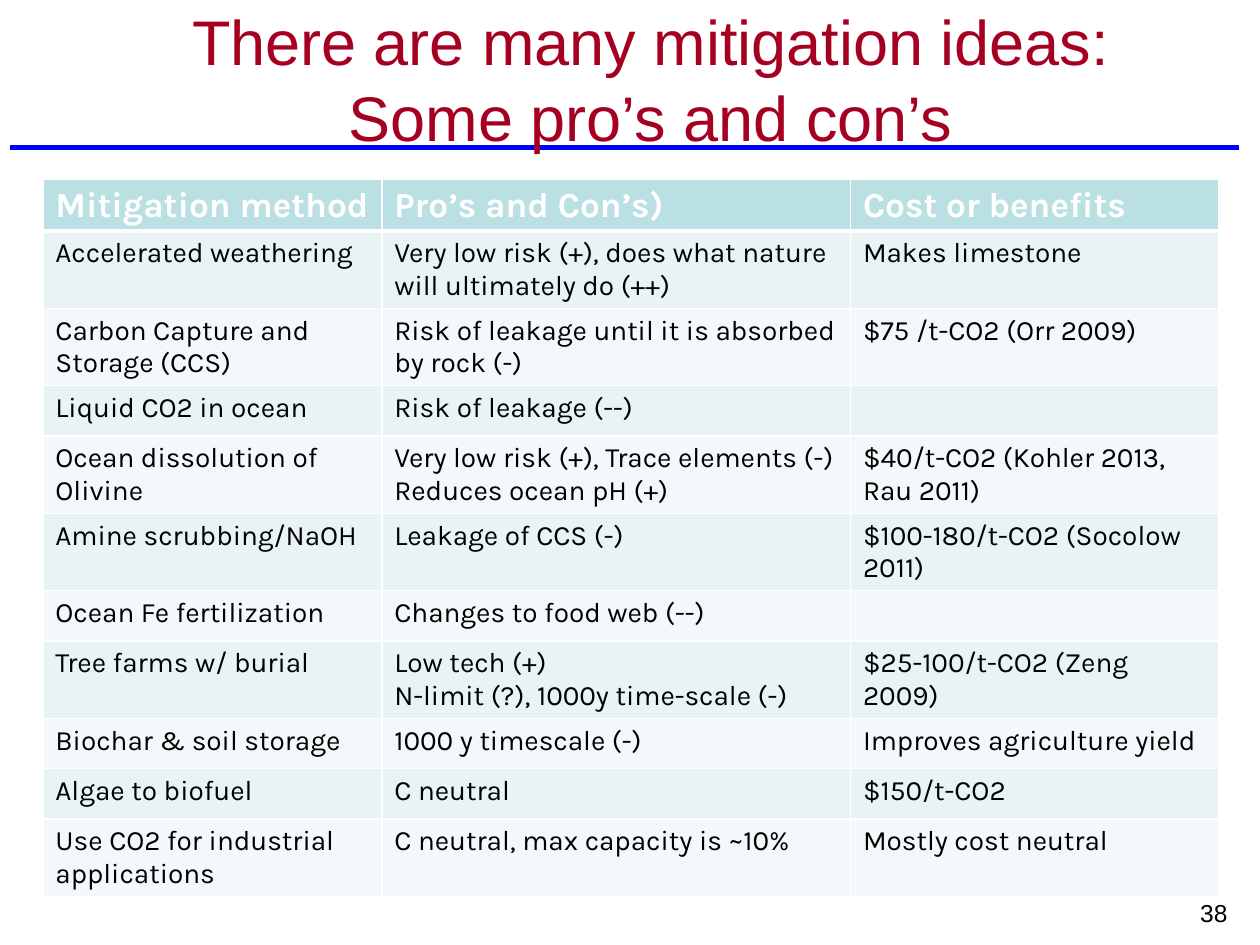
import pptx
import pptx.util
import pptx.dml.color
import pptx.enum.shapes
import pptx.enum.text
import pptx.oxml.ns
from lxml import etree

Inches = pptx.util.Inches
ALIGN = pptx.enum.text.PP_ALIGN
COLORS = {
    "title": "A50021",
    "rule": "0000FF",
    "header": "BBE0E3",
    "odd": "E7F3F4",
    "even": "F3F9FA",
    "white": "FFFFFF",
    "black": "000000",
}


def add_run(paragraph, text, size, font, color, bold=False):
    run = paragraph.add_run()
    run.text = text
    run.font.size = pptx.util.Pt(size)
    run.font.name = font
    run.font.bold = bold
    run.font.color.rgb = pptx.dml.color.RGBColor.from_string(COLORS[color])


def add_border(cell, side, points):
    qn = pptx.oxml.ns.qn
    properties = cell._tc.get_or_add_tcPr()
    line = etree.SubElement(properties, qn(f"a:ln{side}"), w=str(pptx.util.Pt(points)))
    fill = etree.SubElement(line, qn("a:solidFill"))
    etree.SubElement(fill, qn("a:srgbClr"), val=COLORS["white"])


presentation = pptx.Presentation()
presentation.slide_width = Inches(10)
presentation.slide_height = Inches(7.5)
slide = presentation.slides.add_slide(presentation.slide_layouts[6])

title_rule = slide.shapes.add_connector(
    pptx.enum.shapes.MSO_CONNECTOR.STRAIGHT,
    Inches(0.08), Inches(1.17), Inches(9.83), Inches(1.17))
title_rule.line.color.rgb = pptx.dml.color.RGBColor.from_string(COLORS["rule"])
title_rule.line.width = pptx.util.Pt(3)
etree.SubElement(title_rule._element.spPr, pptx.oxml.ns.qn("a:effectLst"))

title = slide.shapes.add_textbox(Inches(0.58), Inches(0.08), Inches(9.17), Inches(1.08)).text_frame
title.word_wrap = True
title.vertical_anchor = pptx.enum.text.MSO_ANCHOR.MIDDLE
heading = title.paragraphs[0]
heading.alignment = ALIGN.CENTER
add_run(heading, "There are many mitigation ideas:", 36, "Arial", "title")
heading.add_line_break()
add_run(heading, "Some pro’s and con’s", 36, "Arial", "title")

methods = [
    ("Mitigation method", "Pro’s and Con’s)", "Cost or benefits"),
    ("Accelerated weathering", "Very low risk (+), does what nature will ultimately do (++)", "Makes limestone"),
    ("Carbon Capture and Storage (CCS)", "Risk of leakage until it is absorbed by rock (-)", "$75 /t-CO2 (Orr 2009)"),
    ("Liquid CO2 in ocean", "Risk of leakage (--)", ""),
    ("Ocean dissolution of Olivine", "Very low risk (+), Trace elements (-)\nReduces ocean pH (+)",
     "$40/t-CO2 (Kohler 2013, Rau 2011)"),
    ("Amine scrubbing/NaOH", "Leakage of CCS (-)", "$100-180/t-CO2 (Socolow 2011)"),
    ("Ocean Fe fertilization", "Changes to food web (--)", ""),
    ("Tree farms w/ burial", "Low tech (+)\nN-limit (?), 1000y time-scale (-)", "$25-100/t-CO2 (Zeng 2009)"),
    ("Biochar & soil storage", "1000 y timescale (-)", "Improves agriculture yield"),
    ("Algae to biofuel", "C neutral", "$150/t-CO2"),
    ("Use CO2 for industrial applications", "C neutral, max capacity is ~10%", "Mostly cost neutral"),
]
row_height = Inches(0.4)
comparison = slide.shapes.add_table(
    len(methods), 3, Inches(0.34), Inches(1.42), Inches(9.33), row_height * len(methods)).table
for column, width in zip(comparison.columns, (2.69, 3.72, 2.92)):
    column.width = Inches(width)

for row, entries in enumerate(methods):
    comparison.rows[row].height = row_height
    is_header = row == 0
    band = "header" if is_header else "odd" if row % 2 else "even"
    for column, entry in enumerate(entries):
        cell = comparison.cell(row, column)
        cell.margin_top = Inches(0.05)
        cell.margin_bottom = Inches(0.03)
        for side in "LRTB":
            below_header = (row, side) in ((0, "B"), (1, "T"))
            add_border(cell, side, 3 if below_header else 1)
        cell.fill.solid()
        cell.fill.fore_color.rgb = pptx.dml.color.RGBColor.from_string(COLORS[band])
        for index, text in enumerate(entry.split("\n")):
            paragraph = cell.text_frame.add_paragraph() if index else cell.text_frame.paragraphs[0]
            paragraph.font.size = pptx.util.Pt(16)
            if text:
                add_run(paragraph, text, 20 if is_header else 16, "Karla",
                        "white" if is_header else "black", is_header)

page_number = slide.shapes.add_textbox(Inches(9.17), Inches(7.08), Inches(0.67), Inches(0.27)).text_frame
page_number.word_wrap = True
page_number.paragraphs[0].alignment = ALIGN.RIGHT
add_run(page_number.paragraphs[0], "38", 14, "Arial", "black")

presentation.save("out.pptx")
